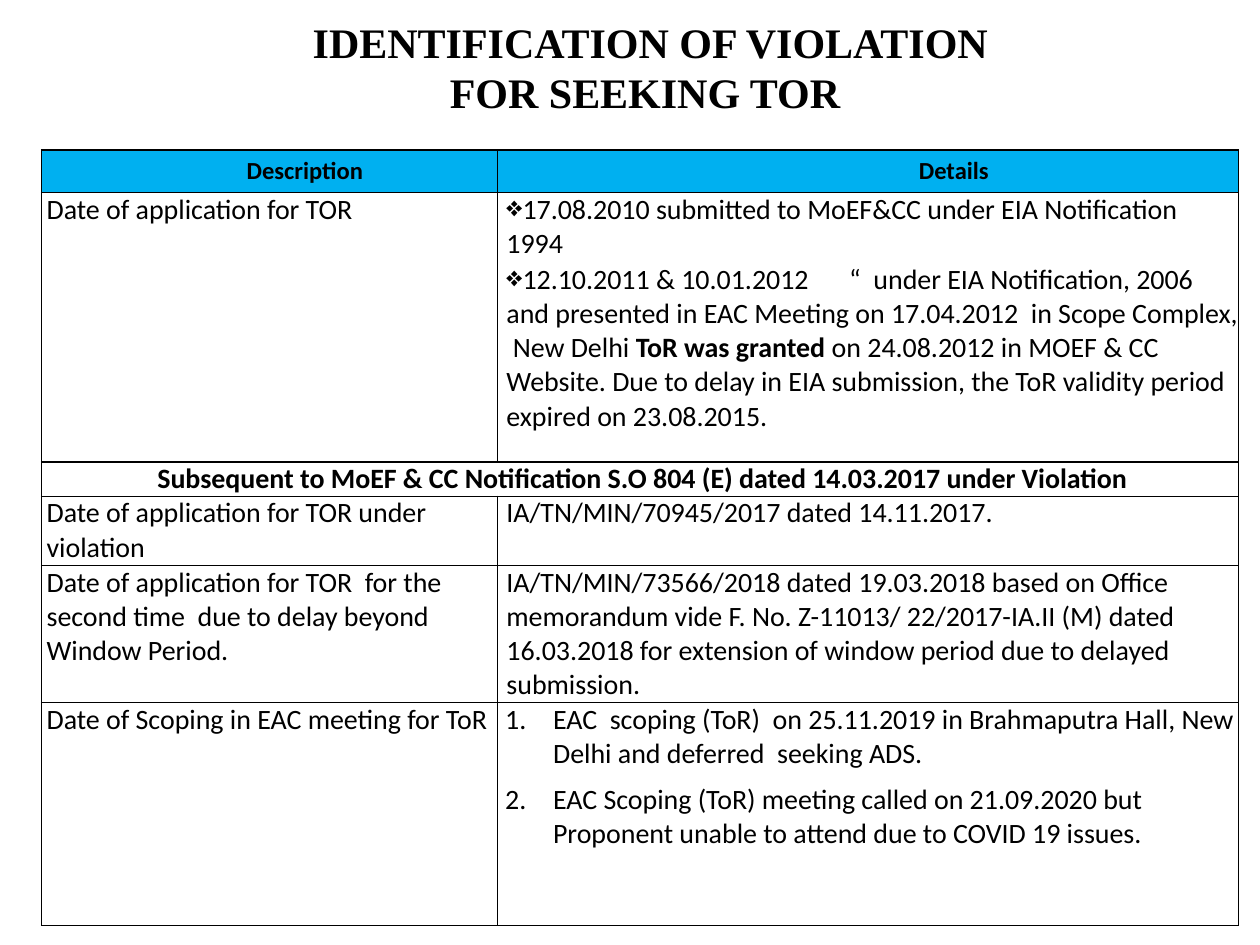
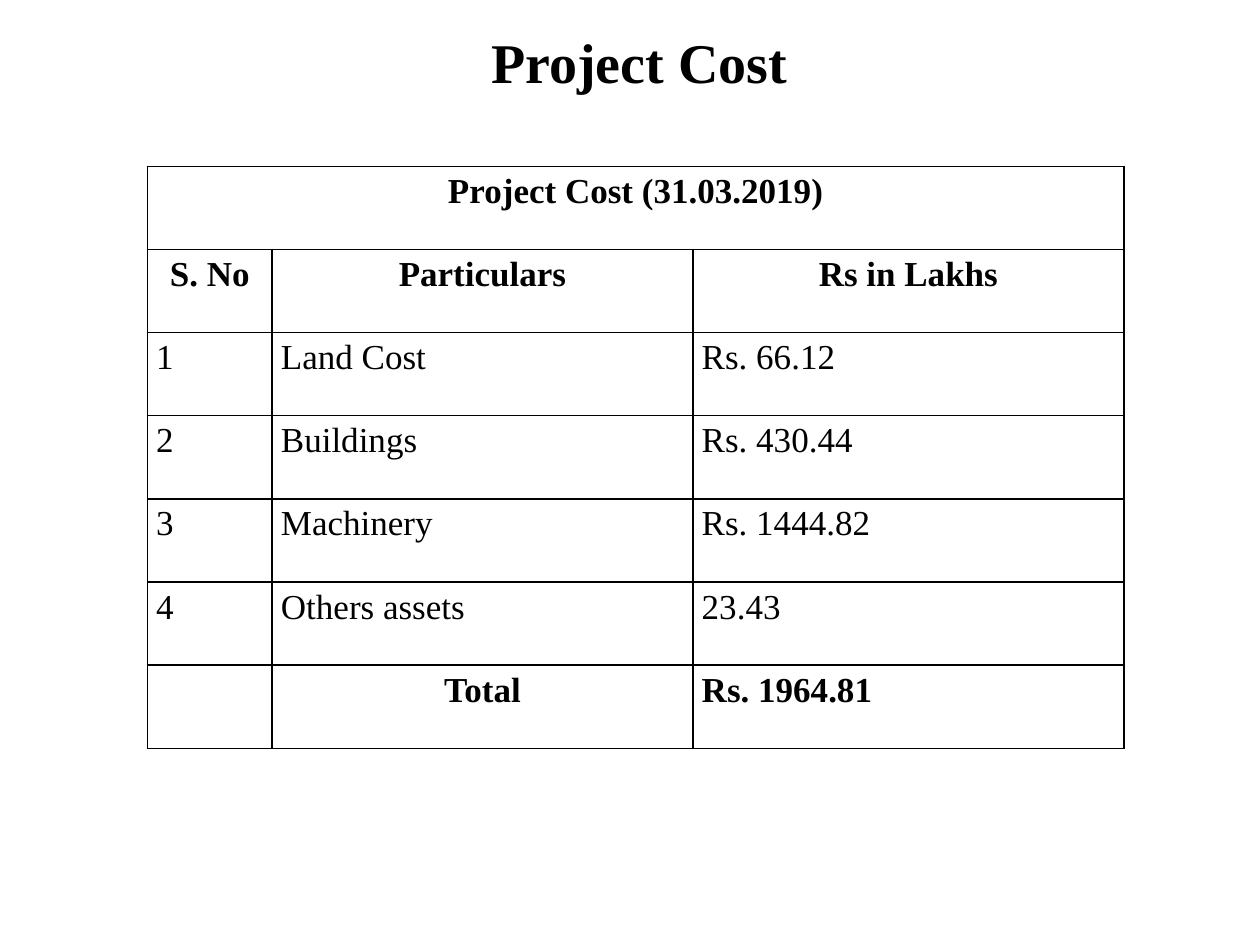
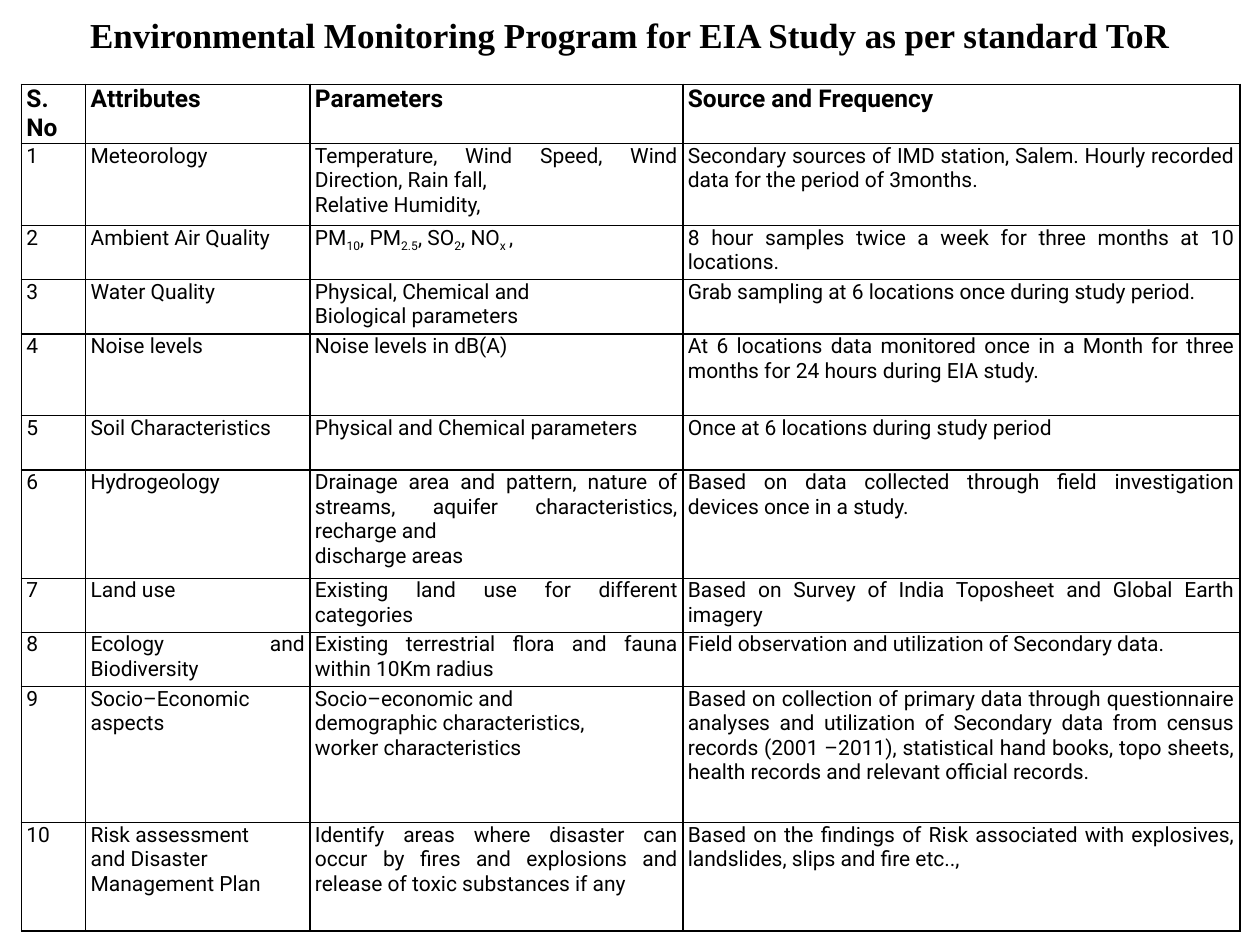
from dataclasses import dataclass, replace

from lxml.etree import SubElement
from pptx import Presentation
from pptx.dml.color import RGBColor
from pptx.enum.text import MSO_ANCHOR, PP_ALIGN
from pptx.oxml.ns import qn
from pptx.util import Inches, Pt

BLACK, SKY = "000000", "00B0F0"
SERIF = "Times New Roman"
MID, JUST = PP_ALIGN.CENTER, PP_ALIGN.JUSTIFY


@dataclass(frozen=True)
class Style:
    font: str
    size: float
    bold: bool = False
    align: PP_ALIGN = PP_ALIGN.LEFT
    left: float = 0
    hang: float = 0
    before: float = 0
    line: float = 1
    mark: str = ""
    tab: float = 0


@dataclass(frozen=True)
class Run:
    text: str
    bold: bool = False
    sub: bool = False


@dataclass(frozen=True)
class Para:
    runs: tuple[Run, ...]
    style: Style


@dataclass(frozen=True)
class Cell:
    paras: tuple[Para, ...] = ()
    fill: str = ""
    side: float = 0
    top: float = 0
    span: int = 1


@dataclass(frozen=True)
class Grid:
    left: float
    top: float
    cols: tuple[float, ...]
    rows: tuple[float, ...]
    cells: list[list[Cell]]


@dataclass(frozen=True)
class Title:
    box: tuple[float, float, float, float]
    text: str
    size: float
    align: PP_ALIGN = MID
    wrap: bool = True


def color(code: str) -> RGBColor:
    return RGBColor.from_string(code)


def lines(text: str, style: Style) -> tuple[Para, ...]:
    """One paragraph for each line of text."""
    return tuple(Para((Run(part),), style) for part in text.split("\n"))


# Text
def set_para(para, data: Para) -> None:
    style = data.style
    para.alignment = style.align
    para.line_spacing = style.line
    para.space_before = Pt(style.before)
    props = para._p.get_or_add_pPr()
    props.set("marL", str(Inches(style.left)))
    props.set("indent", str(Inches(style.hang)))
    if style.mark == "1.":
        SubElement(props, qn("a:buAutoNum"), type="arabicPeriod")
    elif style.mark:
        SubElement(props, qn("a:buChar"), char=style.mark)
    if style.tab:
        tabs = SubElement(props, qn("a:tabLst"))
        SubElement(tabs, qn("a:tab"), pos=str(Inches(style.tab)), algn="l")
    for item in data.runs:
        run = para.add_run()
        run.text = item.text
        font = run.font
        font.name, font.size = style.font, Pt(style.size)
        font.bold = style.bold or item.bold
        font.color.rgb = color(BLACK)
        if item.sub:
            font._element.set("baseline", "-25000")


def fill_text(frame, paras: tuple[Para, ...]) -> None:
    for i, data in enumerate(paras):
        set_para(frame.add_paragraph() if i else frame.paragraphs[0], data)


def add_title(slide, title: Title) -> None:
    frame = slide.shapes.add_textbox(*map(Inches, title.box)).text_frame
    frame.word_wrap = title.wrap
    style = Style(SERIF, title.size, True, title.align)
    fill_text(frame, lines(title.text, style))


# Tables
def add_edges(cell) -> None:
    props = cell._tc.get_or_add_tcPr()
    for side in "LRTB":
        edge = SubElement(props, qn(f"a:ln{side}"), w=str(Pt(1)))
        paint = SubElement(edge, qn("a:solidFill"))
        SubElement(paint, qn("a:srgbClr"), val=BLACK)


def set_cell(cell, data: Cell) -> None:
    cell.margin_left = cell.margin_right = Inches(data.side)
    cell.margin_top = cell.margin_bottom = Inches(data.top)
    cell.vertical_anchor = MSO_ANCHOR.TOP
    add_edges(cell)
    if data.fill:
        cell.fill.solid()
        cell.fill.fore_color.rgb = color(data.fill)
    else:
        cell.fill.background()
    fill_text(cell.text_frame, data.paras)


def add_grid(slide, grid: Grid) -> None:
    size = (grid.left, grid.top, sum(grid.cols), sum(grid.rows))
    table = slide.shapes.add_table(
        len(grid.rows), len(grid.cols), *map(Inches, size)).table
    table.first_row = table.horz_banding = False
    for col, width in zip(table.columns, grid.cols):
        col.width = Inches(width)
    for row, height in zip(table.rows, grid.rows):
        row.height = Inches(height)
    for r, row in enumerate(grid.cells):
        for c, data in enumerate(row):
            set_cell(table.cell(r, c), data)
            if data.span > 1:
                table.cell(r, c).merge(table.cell(r, c + data.span - 1))


# Slide 1: dates of the violation case
def dates() -> Grid:
    label = Style("Calibri", 16, left=0.04, before=0.9)
    value = replace(label, left=0.07, before=6.7)
    point = replace(label, left=0.07, mark="❖", tab=2.79)
    step = replace(value, left=0.44, hang=-0.38, mark="1.")
    band = replace(label, bold=True, align=MID)

    def head(text: str, left: float) -> Cell:
        style = Style("Calibri", 14, True, MID, left)
        return Cell(lines(text, style), SKY, 0.1, 0.05)

    def pair(name: str, paras: tuple[Para, ...]) -> list[Cell]:
        return [Cell(lines(name, label)), Cell(paras)]

    filed = (
        *lines("17.08.2010 submitted to MoEF&CC under EIA Notification 1994", point),
        Para((
            Run("12.10.2011 & 10.01.2012\t“  under EIA Notification, 2006 and "
                "presented in EAC Meeting on 17.04.2012  in Scope Complex,  New Delhi "),
            Run("ToR was granted ", bold=True),
            Run("on 24.08.2012 in MOEF & CC Website. Due to delay in EIA submission, "
                "the ToR validity period expired on 23.08.2015."),
        ), point),
    )
    cells = [
        [head("Description", 0.56), head("Details", 1.36)],
        pair("Date of application for TOR", filed),
        [Cell(lines("Subsequent to MoEF & CC Notification S.O 804 (E) dated "
                    "14.03.2017 under Violation", band), span=2), Cell()],
        pair("Date of application for TOR under violation",
             lines("IA/TN/MIN/70945/2017 dated 14.11.2017.", value)),
        pair("Date of application for TOR  for the second time  due to delay "
             "beyond Window Period.",
             lines("IA/TN/MIN/73566/2018 dated 19.03.2018 based on Office memorandum "
                   "vide F. No. Z-11013/ 22/2017-IA.II (M) dated 16.03.2018 for "
                   "extension of window period due to delayed submission.", value)),
        pair("Date of Scoping in EAC meeting for ToR",
             lines("EAC  scoping (ToR)  on 25.11.2019 in Brahmaputra Hall, New Delhi "
                   "and deferred  seeking ADS.\n"
                   "EAC Scoping (ToR) meeting called on 21.09.2020 but Proponent "
                   "unable to attend due to COVID 19 issues.", step)),
    ]
    return Grid(0.33, 1.19, (3.62, 5.88), (0.33, 2.14, 0.27, 0.55, 1.06, 1.77), cells)


# Slide 2: project cost
def costs() -> Grid:
    body = Style(SERIF, 20, line=1.15)
    bold = replace(body, bold=True)
    head = replace(bold, align=MID)

    def cell(text: str, style: Style = body, span: int = 1) -> Cell:
        return Cell(lines(text, style), side=0.07, span=span)

    items = [
        ("Land Cost", "Rs. 66.12"),
        ("Buildings", "Rs. 430.44"),
        ("Machinery", "Rs. 1444.82"),
        ("Others assets", "23.43"),
    ]
    cells = [
        [cell("Project Cost (31.03.2019)", head, 3), Cell(), Cell()],
        [cell(text, head) for text in ("S. No", "Particulars", "Rs in Lakhs")],
        *([cell(str(n)), cell(name), cell(cost)]
          for n, (name, cost) in enumerate(items, 1)),
        [Cell(), cell("Total", head), cell("Rs. 1964.81", bold)],
    ]
    return Grid(1.17, 1.32, (0.99, 3.34, 3.42), (0.66,) * len(cells), cells)


# Slide 3: monitoring program
def program() -> Grid:
    body = Style("Roboto", 12, align=JUST)
    head = replace(body, size=14, bold=True)

    def cell(text: str, style: Style = body) -> Cell:
        return Cell(lines(text, style), side=0.04)

    # Every second piece is a subscript
    parts = ("PM", "10", ", PM", "2.5", ", SO", "2", ", NO", "x ", ", ")
    gases = Para(tuple(Run(t, sub=i % 2 == 1) for i, t in enumerate(parts)), body)
    items = [
        ("Meteorology",
         "Temperature, Wind Speed, Wind Direction, Rain fall, \nRelative Humidity,",
         "Secondary sources of IMD station, Salem. Hourly recorded data for the "
         "period of 3months."),
        ("Ambient Air Quality", gases,
         "8 hour samples twice a week for three months at 10 locations."),
        ("Water Quality", "Physical, Chemical and\nBiological parameters",
         "Grab sampling at 6 locations once during study period."),
        ("Noise levels", "Noise levels in dB(A)",
         "At 6 locations data monitored once in a Month for three months for "
         "24 hours during EIA study."),
        ("Soil Characteristics", "Physical and Chemical parameters",
         "Once at 6 locations during study period"),
        ("Hydrogeology",
         "Drainage area and pattern, nature of streams, aquifer characteristics, "
         "recharge and\ndischarge areas",
         "Based on data collected through field investigation devices once in a study."),
        ("Land use", "Existing land use for different categories",
         "Based on Survey of India Toposheet and Global Earth imagery"),
        ("Ecology and Biodiversity",
         "Existing terrestrial flora and fauna within 10Km radius",
         "Field observation and utilization of Secondary data."),
        ("Socio–Economic\naspects",
         "Socio–economic and\ndemographic characteristics,\nworker characteristics",
         "Based on collection of primary data through questionnaire analyses and "
         "utilization of Secondary data from census records (2001 –2011), "
         "statistical hand books, topo sheets, health records and relevant "
         "official records."),
        ("Risk assessment\nand Disaster\nManagement Plan",
         "Identify areas where disaster can occur by fires and explosions and "
         "release of toxic substances if any",
         "Based on the findings of Risk associated with explosives, landslides, "
         "slips and fire etc..,"),
    ]
    names = ("S. No", "Attributes", "Parameters", "Source and Frequency")
    cells = [[cell(name, head) for name in names]]
    for n, row in enumerate(items, 1):
        cells.append([cell(str(n))] + [
            Cell((t,), side=0.04) if isinstance(t, Para) else cell(t) for t in row])
    rows = (0.47, 0.65, 0.43, 0.43, 0.65, 0.43, 0.86, 0.43, 0.43, 1.08, 0.86)
    return Grid(0.17, 0.67, (0.51, 1.78, 2.96, 4.42), rows, cells)


def main() -> None:
    deck = Presentation()
    deck.slide_width, deck.slide_height = Inches(10), Inches(7.5)
    pages = [
        (Title((1.08, 0.08, 8.08, 0.91),
               " IDENTIFICATION OF VIOLATION\nFOR SEEKING TOR", 24), dates()),
        (Title((3.8, 0.17, 2.57, 0.64), "Project Cost", 32,
               PP_ALIGN.LEFT, False), costs()),
        (Title((0.25, 0.06, 9.5, 0.44),
               "Environmental Monitoring Program for EIA Study as per standard ToR",
               20), program()),
    ]
    for title, grid in pages:
        slide = deck.slides.add_slide(deck.slide_layouts[6])
        add_grid(slide, grid)
        add_title(slide, title)
    deck.save("out.pptx")


if __name__ == "__main__":
    main()
